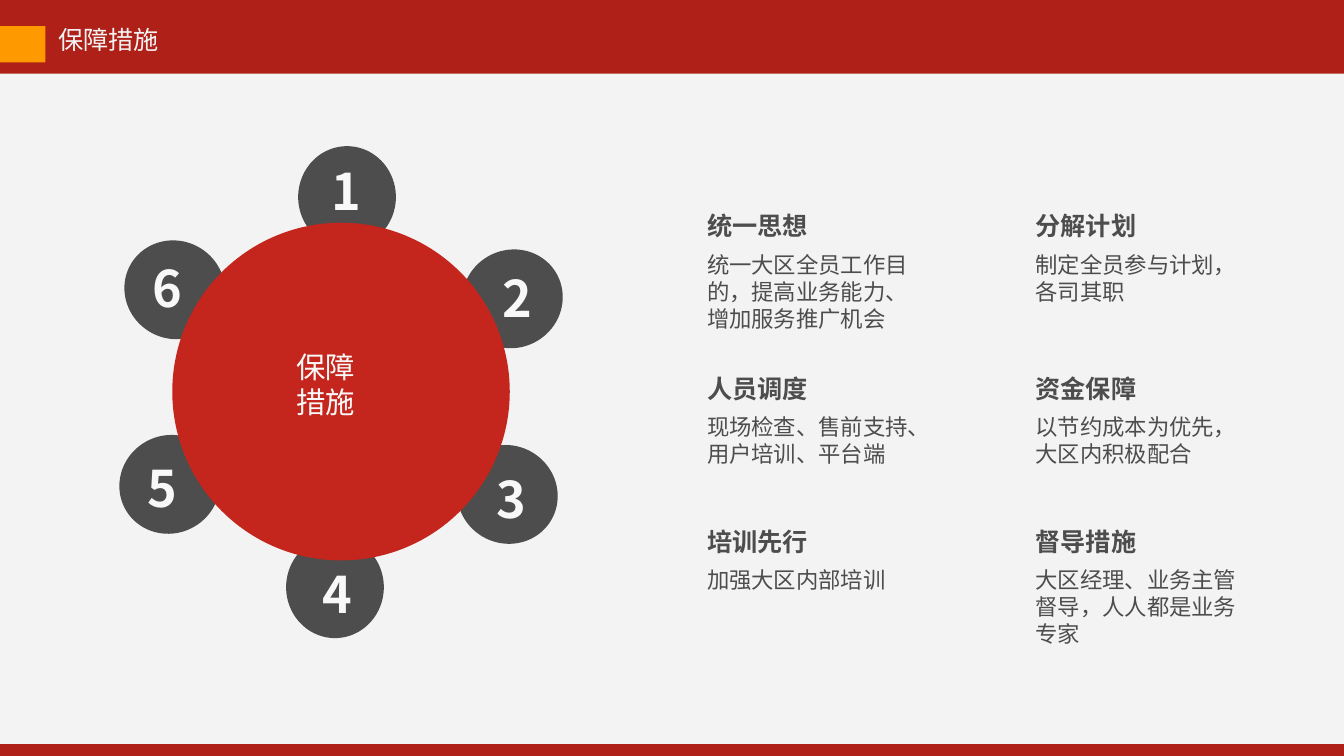
from dataclasses import dataclass

from lxml.etree import SubElement
from pptx import Presentation
from pptx.dml.color import RGBColor
from pptx.enum.shapes import MSO_SHAPE
from pptx.enum.text import MSO_AUTO_SIZE, PP_ALIGN
from pptx.oxml.ns import qn
from pptx.shapes.autoshape import Shape
from pptx.slide import Slide
from pptx.util import Emu, Pt

PX = 9144  # 100 px to the inch
FONT = "Noto Sans CJK SC"
RED, DISC_RED, ORANGE = "AF2019", "C4261D", "FF9900"
PALE, GREY, WHITE = "F3F3F3", "4D4D4D", "F8F8F8"

TITLE = {"size": Pt(18), "bold": False}
HEADING = {"size": Pt(18), "bold": True}
BODY = {"size": Pt(16), "bold": False}
NUMBER = {"size": Pt(36), "bold": True}
HUB = {"size": Pt(21), "bold": False}


@dataclass
class Petal:
    """A numbered circle: its centre and the corner of its number."""
    cx: int
    cy: int
    num_x: int
    num_y: int


@dataclass
class Measure:
    heading: str
    body: str
    body_h: int


PETALS = [
    Petal(344, 195, 318, 154), Petal(508, 296, 488, 260),
    Petal(503, 490, 482, 459), Petal(332, 582, 309, 554),
    Petal(168, 480, 136, 449), Petal(173, 287, 141, 250),
]
PETAL_W, PETAL_H = 97, 101

MEASURES = [
    Measure("统一思想", "统一大区全员工作目的，提高业务能力、增加服务推广机会", 91),
    Measure("分解计划", "制定全员参与计划，各司其职", 64),
    Measure("人员调度", "现场检查、售前支持、用户培训、平台端", 91),
    Measure("资金保障", "以节约成本为优先，大区内积极配合", 64),
    Measure("培训先行", "加强大区内部培训", 37),
    Measure("督导措施", "大区经理、业务主管督导，人人都是业务专家", 91),
]
COLUMNS, ROWS = (692, 1018), (204, 365, 517)


def rgb(color: str) -> RGBColor:
    return RGBColor.from_string(color)


def emu(*lengths: int) -> list[Emu]:
    return [Emu(n * PX) for n in lengths]


def add_block(s: Slide, kind: MSO_SHAPE, x: int, y: int, w: int, h: int,
              color: str) -> Shape:
    sp = s.shapes.add_shape(kind, *emu(x, y, w, h))
    sp.shadow.inherit = False
    sp.fill.solid()
    sp.fill.fore_color.rgb = rgb(color)
    sp.line.fill.background()
    return sp


def add_text(s: Slide, lines: list[str], x: int, y: int, w: int, h: int,
             fmt: dict, color: str, wrap: bool = False,
             align: PP_ALIGN = PP_ALIGN.LEFT) -> None:
    tf = s.shapes.add_textbox(*emu(x, y, w, h)).text_frame
    tf.word_wrap = wrap
    tf.auto_size = MSO_AUTO_SIZE.SHAPE_TO_FIT_TEXT
    for i, line in enumerate(lines):
        p = tf.paragraphs[0] if i == 0 else tf.add_paragraph()
        p.alignment = align
        r = p.add_run()
        r.text = line
        for name, value in {**fmt, "name": FONT}.items():
            setattr(r.font, name, value)
        r.font.color.rgb = rgb(color)
        SubElement(r.font._element, qn("a:ea"), typeface=FONT)


def add_wheel(s: Slide) -> None:
    for i, petal in enumerate(PETALS):
        sp = add_block(s, MSO_SHAPE.OVAL, petal.cx - PETAL_W // 2,
                       petal.cy - PETAL_H // 2, PETAL_W, PETAL_H, GREY)
        sp.rotation = 60 * i
        add_text(s, [str(i + 1)], petal.num_x, petal.num_y, 51, 71,
                 NUMBER, WHITE, align=PP_ALIGN.CENTER)
    add_block(s, MSO_SHAPE.OVAL, 171, 221, 335, 335, DISC_RED)
    add_text(s, ["保障", "措施"], 284, 341, 80, 82, HUB, WHITE)


def add_measures(s: Slide) -> None:
    for i, m in enumerate(MEASURES):
        row, col = divmod(i, len(COLUMNS))
        x, y = COLUMNS[col], ROWS[row]
        add_text(s, [m.heading], x, y, 121, 40, HEADING, GREY)
        add_text(s, [m.body], x, y + 40, 220, m.body_h, BODY, GREY, wrap=True)


def main() -> None:
    prs = Presentation()
    prs.slide_width, prs.slide_height = emu(1334, 750)
    s = prs.slides.add_slide(prs.slide_layouts[6])
    s.background.fill.solid()
    s.background.fill.fore_color.rgb = rgb(RED)
    add_block(s, MSO_SHAPE.RECTANGLE, 0, 73, 1334, 665, PALE)
    add_text(s, ["保障措施"], 48, 19, 121, 40, TITLE, PALE)
    add_block(s, MSO_SHAPE.RECTANGLE, 0, 26, 45, 36, ORANGE)
    add_wheel(s)
    add_measures(s)
    prs.save("out.pptx")


if __name__ == "__main__":
    main()
